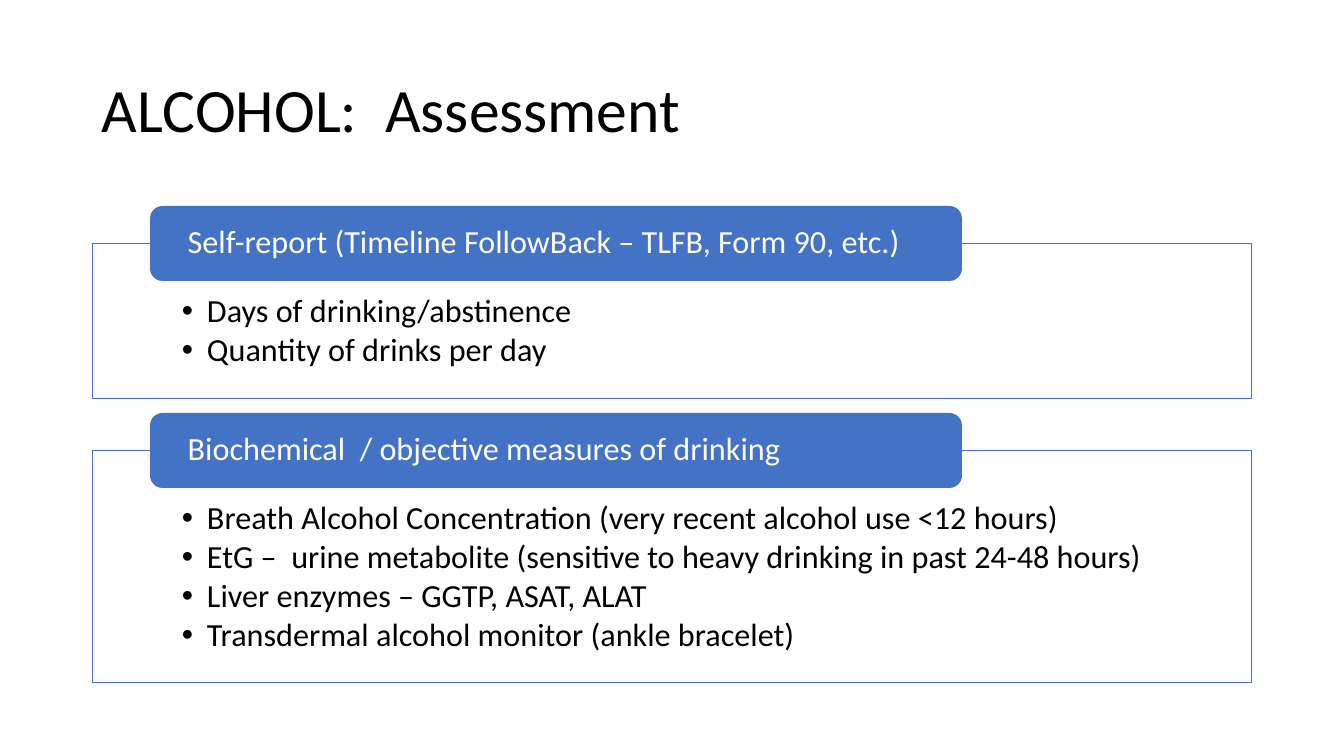
import pptx
import pptx.util
import pptx.dml.color
import pptx.enum.shapes
import pptx.enum.text
import pptx.oxml.ns
import lxml.etree

PX = 914400 / 100.8
COLORS = {"text": "000000", "accent": "4472C4", "paper": "FFFFFF"}
SHAPES = pptx.enum.shapes.MSO_SHAPE
ANCHORS = pptx.enum.text.MSO_ANCHOR


def px(*lengths):
    return [pptx.util.Emu(round(length * PX)) for length in lengths]


def write(box, lines, size, color, anchor, insets, space_after=0):
    frame = box.text_frame
    left, top, right, bottom = px(*insets)
    frame_format = {"word_wrap": True, "vertical_anchor": anchor,
                    "margin_left": left, "margin_top": top,
                    "margin_right": right, "margin_bottom": bottom}
    for key, value in frame_format.items():
        setattr(frame, key, value)
    frame.text = "\n".join(lines)
    for paragraph in frame.paragraphs:
        paragraph.alignment = pptx.enum.text.PP_ALIGN.LEFT
        paragraph.line_spacing = 0.9
        paragraph.space_after = pptx.util.Pt(space_after)
        font = paragraph.runs[0].font
        font.name = "Calibri"
        font.size = pptx.util.Pt(size)
        font.color.rgb = pptx.dml.color.RGBColor.from_string(COLORS[color])


presentation = pptx.Presentation()
presentation.slide_width, presentation.slide_height = px(1344, 756)
slide = presentation.slides.add_slide(presentation.slide_layouts[6])
accent = pptx.dml.color.RGBColor.from_string(COLORS["accent"])
paper = pptx.dml.color.RGBColor.from_string(COLORS["paper"])

# Title
title = slide.shapes.add_textbox(*px(92, 40, 1159, 146))
write(title, ["ALCOHOL:  Assessment"], 44, "text", ANCHORS.MIDDLE, (10, 5, 10, 5))

# Sections: frame top, frame height, heading, measures
sections = [
    (243, 155, "Self-report (Timeline FollowBack – TLFB, Form 90, etc.)",
     ["Days of drinking/abstinence", "Quantity of drinks per day"]),
    (450, 232, "Biochemical  / objective measures of drinking",
     ["Breath Alcohol Concentration (very recent alcohol use <12 hours)",
      "EtG –  urine metabolite (sensitive to heavy drinking in past 24-48 hours)",
      "Liver enzymes – GGTP, ASAT, ALAT",
      "Transdermal alcohol monitor (ankle bracelet)"]),
]

for top, height, heading, measures in sections:
    # Outlined frame, nearly opaque
    panel = slide.shapes.add_shape(SHAPES.RECTANGLE, *px(92, top, 1159, height))
    panel.shadow.inherit = False
    panel.fill.solid()
    panel.fill.fore_color.rgb = paper
    fill_color = panel.fill._xPr.find(".//" + pptx.oxml.ns.qn("a:srgbClr"))
    lxml.etree.SubElement(fill_color, pptx.oxml.ns.qn("a:alpha"), val="90000")
    panel.line.color.rgb = accent
    panel.line.width = pptx.util.Pt(0.5)
    write(panel, measures, 23, "text", ANCHORS.TOP, (90, 52, 90, 18), 3)

    # Bullets with a hanging indent
    hang = px(25)[0]
    for paragraph in panel.text_frame.paragraphs:
        properties = paragraph._p.get_or_add_pPr()
        properties.set("marL", str(hang))
        properties.set("indent", str(-hang))
        lxml.etree.SubElement(properties, pptx.oxml.ns.qn("a:buFont"), typeface="Arial")
        lxml.etree.SubElement(properties, pptx.oxml.ns.qn("a:buChar"), char="•")

    # Heading tab straddling the frame's top edge
    tab = slide.shapes.add_shape(SHAPES.ROUNDED_RECTANGLE, *px(150, top - 37, 812, 75))
    tab.shadow.inherit = False
    tab.fill.solid()
    tab.fill.fore_color.rgb = accent
    tab.line.fill.background()
    write(tab, [heading], 23, "paper", ANCHORS.MIDDLE, (34, 0, 34, 0))

presentation.save("out.pptx")
